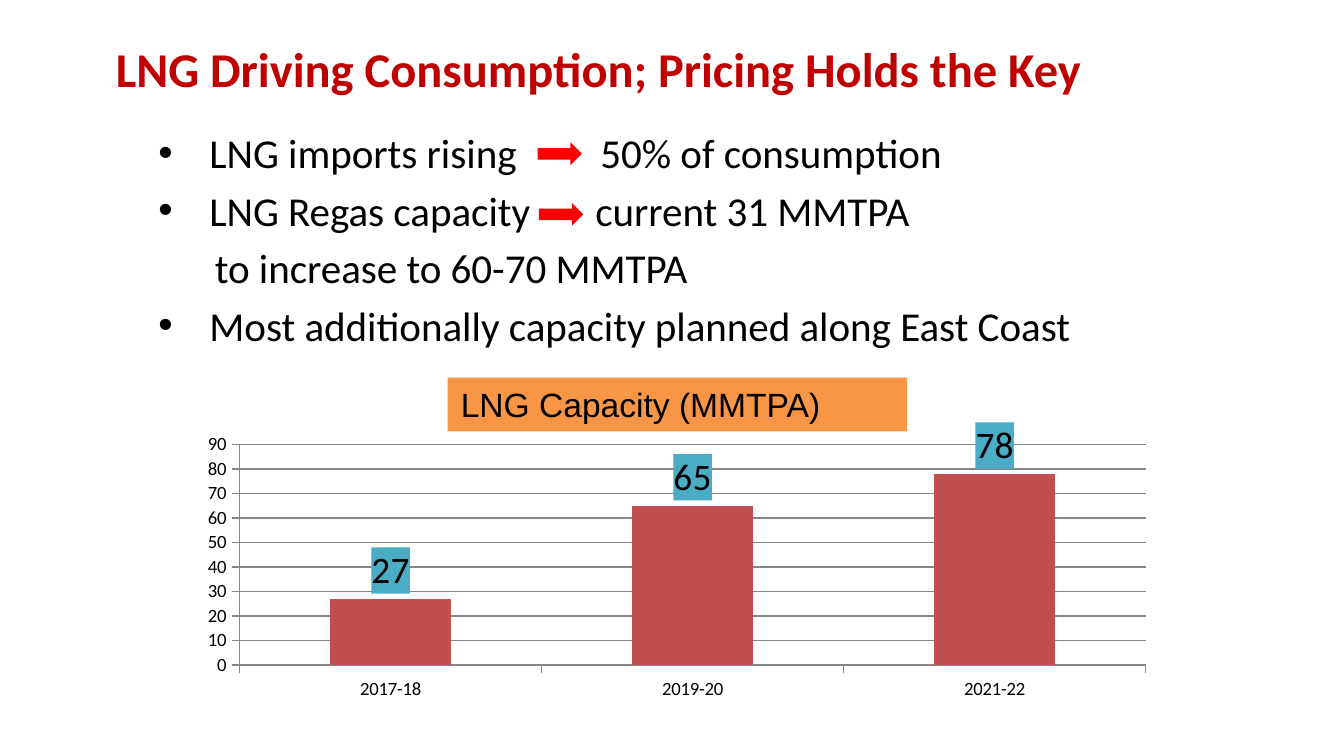
"""Builds the slide on LNG consumption, with bullets and a capacity chart."""
from pptx import Presentation
from pptx.chart.data import CategoryChartData
from pptx.dml.color import RGBColor
from pptx.enum.chart import XL_CHART_TYPE, XL_LABEL_POSITION, XL_TICK_MARK
from pptx.enum.shapes import MSO_SHAPE
from pptx.enum.text import MSO_ANCHOR, PP_ALIGN
from pptx.oxml import parse_xml
from pptx.oxml.ns import nsdecls, qn
from pptx.util import Inches, Pt

W = 10
H = W * 9 / 16
TITLE = "LNG Driving Consumption; Pricing Holds the Key"
BULLETS = [
    {"runs": ["LNG imports rising", "50% of consumption"], "gap": 39.8},
    {"runs": ["LNG Regas capacity", "current 31 MMTPA"], "gap": 29.8},
    {"runs": ["to increase to 60-70 MMTPA"], "indent": 0.42},
    {"runs": ["Most additionally capacity planned along East Coast"]},
]
HANGING = 0.38
CAPTION = "LNG Capacity (MMTPA)"
CAPACITY = {"2017-18": 27, "2019-20": 65, "2021-22": 78}
PLOT_SHARES = {"x": 0.05, "y": 0.08, "w": 0.93, "h": 0.79}
ARROWS = [(4, 1.06), (4.01, 1.51)]
BLACK, RED, GREY = "000000", "FF0000", "878787"


def rgb(value):
    return RGBColor.from_string(value)


def box(*lengths):
    return [Inches(n) for n in lengths]


def style(font, size, color=BLACK, name="Calibri", bold=False):
    font.size, font.name, font.bold = Pt(size), name, bold
    font.color.rgb = rgb(color)


def add_run(p, text, *look, **more):
    r = p.add_run()
    r.text = text
    style(r.font, *look, **more)
    return r


def add_text(s, *place):
    tf = s.shapes.add_textbox(*box(*place)).text_frame
    tf.word_wrap = True
    return tf


def add_shape(s, kind, color, *place):
    sp = s.shapes.add_shape(kind, *box(*place))
    sp.shadow.inherit = False
    sp.fill.solid()
    sp.fill.fore_color.rgb = rgb(color)
    sp.line.fill.background()
    return sp


def add_bullets(s):
    tf = add_text(s, 1.08, 0.9, 8, 2.08)
    for i, item in enumerate(BULLETS):
        p = tf.add_paragraph() if i else tf.paragraphs[0]
        p.space_before = Pt(4.4 if i else 0)
        pPr = p._p.get_or_add_pPr()
        pPr.set("marL", str(Inches(item.get("indent", HANGING))))
        if "indent" not in item:
            pPr.set("indent", str(-Inches(HANGING)))
            pPr.append(parse_xml(f'<a:buFont {nsdecls("a")} typeface="Arial"/>'))
            pPr.append(parse_xml(f'<a:buChar {nsdecls("a")} char="•"/>'))
        for j, text in enumerate(item["runs"]):
            if j:
                r = add_run(p, " ", 22)
                r.font._element.set("spc", str(round(item["gap"] * 100)))
            add_run(p, text, 22)


def add_capacity_chart(s):
    data = CategoryChartData()
    data.categories = list(CAPACITY)
    data.add_series("Series 1", list(CAPACITY.values()))
    chart = s.shapes.add_chart(XL_CHART_TYPE.COLUMN_CLUSTERED,
                               *box(1.42, 3.14, 7.25, 2.08), data).chart
    chart.has_legend = chart.has_title = False
    style(chart.font, 10)
    plot = chart.plots[0]
    plot.gap_width, plot.vary_by_categories = 150, False
    fill = plot.series[0].format.fill
    fill.solid()
    fill.fore_color.rgb = rgb("C0504D")

    value_axis = chart.value_axis
    value_axis.minimum_scale, value_axis.maximum_scale = 0, 90
    value_axis.major_unit = 10
    value_axis.has_major_gridlines = True
    for axis in (chart.category_axis, value_axis):
        axis.major_tick_mark = XL_TICK_MARK.OUTSIDE
        style(axis.tick_labels.font, 10)
    for part in (chart.category_axis, value_axis, value_axis.major_gridlines):
        part.format.line.color.rgb = rgb(GREY)
        part.format.line.width = Pt(0.75)

    plot.has_data_labels = True
    labels = plot.data_labels
    labels.show_value, labels.position = True, XL_LABEL_POSITION.OUTSIDE_END
    style(labels.font, 20)
    labels._element.find(qn("c:txPr")).addprevious(parse_xml(
        f'<c:spPr {nsdecls("c", "a")}><a:solidFill><a:srgbClr val="4BACC6"/>'
        '</a:solidFill></c:spPr>'))

    area = chart._chartSpace.chart.plotArea
    for old in area.findall(qn("c:layout")):
        area.remove(old)
    shares = "".join(f'<c:{k} val="{v}"/>' for k, v in PLOT_SHARES.items())
    area.insert(0, parse_xml(
        f'<c:layout {nsdecls("c")}><c:manualLayout><c:layoutTarget val="inner"/>'
        f'<c:xMode val="edge"/><c:yMode val="edge"/>{shares}'
        '</c:manualLayout></c:layout>'))


def main():
    prs = Presentation()
    prs.slide_width, prs.slide_height = box(W, H)
    s = prs.slides.add_slide(prs.slide_layouts[6])

    tf = add_text(s, 0, 0.2, 8.92, 0.62)
    tf.vertical_anchor = MSO_ANCHOR.MIDDLE
    tf.paragraphs[0].alignment = PP_ALIGN.CENTER
    add_run(tf.paragraphs[0], TITLE, 26, "C00000", bold=True)

    add_bullets(s)
    add_capacity_chart(s)

    tf = add_shape(s, MSO_SHAPE.RECTANGLE, "F79646", 3.33, 2.81, 3.42, 0.4).text_frame
    tf.vertical_anchor = MSO_ANCHOR.TOP
    tf.paragraphs[0].alignment = PP_ALIGN.LEFT
    add_run(tf.paragraphs[0], CAPTION, 18, name="Arial")

    for left, top in ARROWS:
        add_shape(s, MSO_SHAPE.RIGHT_ARROW, RED, left, top, 0.33, 0.17)
    prs.save("out.pptx")


if __name__ == "__main__":
    main()
